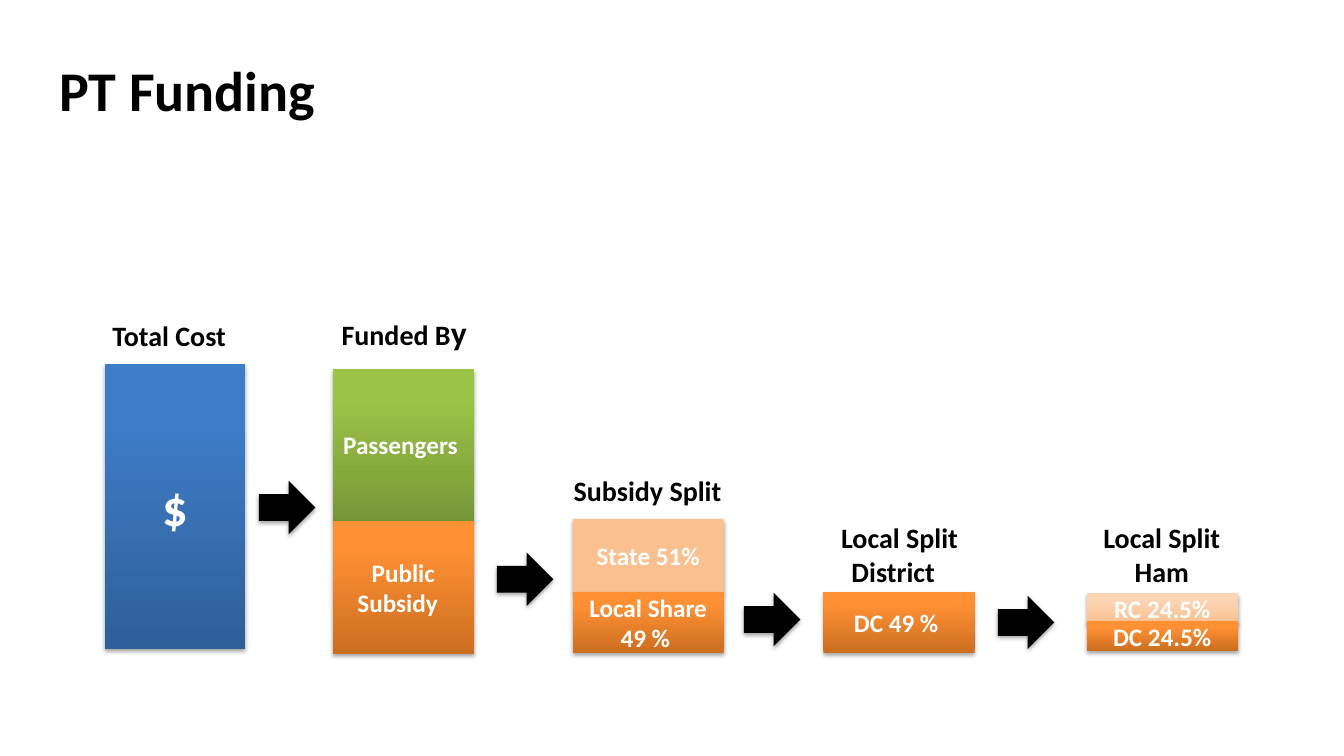
from lxml.etree import SubElement
from pptx import Presentation
from pptx.dml.color import RGBColor
from pptx.enum.shapes import MSO_SHAPE
from pptx.enum.text import MSO_ANCHOR, PP_ALIGN
from pptx.oxml.ns import qn
from pptx.util import Pt

COLOURS = {"black": "000000", "white": "FFFFFF", "peach": "FAC090"}
GRADIENTS = {
    "blue": ("2F5F99", "3D7CC7"),
    "green": ("779737", "9BC348"),
    "orange": ("CC6E20", "FF9034"),
    "pale": ("FAC090", "FCD5B5"),
}
TITLE = {"size": 40, "colour": "black"}
HEADING = {"size": 20, "colour": "black"}
HEADING_LARGE = {"size": 24, "colour": "black"}
BLOCK = {"size": 18, "colour": "white"}
DOLLAR = {"size": 36, "colour": "white"}

BLOCKS = [
    ("$", 74.9, 259.9, 100, 203.8, "blue", DOLLAR),
    ("Passengers ", 237.6, 263.5, 101, 108.4, "green", BLOCK),
    ("Public Subsidy  ", 237.6, 371.9, 101, 95, "orange", BLOCK),
    ("State 51%", 409, 370.6, 108, 52.4, "peach", BLOCK),
    ("Local Share 49 % ", 409, 423, 108, 43.5, "orange", BLOCK),
    ("DC 49 % ", 588.2, 423, 108, 43.5, "orange", BLOCK),
    ("RC 24.5%", 776.2, 423.7, 108, 21.6, "pale", BLOCK),
    ("DC 24.5%", 776.2, 443.5, 108, 21.6, "orange", BLOCK),
]
HEADINGS = [
    ([[("Total Cost ", HEADING)]], 69.1, 223.9, 108, 31.7),
    ([[("Funded B", HEADING), ("y ", HEADING_LARGE)]], 235.4, 218.9, 106.6, 36.7),
    ([[("Subsidy Split", HEADING)]], 400.3, 334.8, 124.6, 31.7),
    ([[("Local Split", HEADING)], [("District  ", HEADING)]], 564.5, 368.6, 156.2, 55.4),
    ([[("Local Split", HEADING)], [("Ham", HEADING)]], 747.4, 368.6, 164.9, 55.4),
]
ARROWS = [(185, 343.4), (355, 394.6), (531.4, 423.4), (712.8, 425.5)]
ARROW_SIZE = (40.3, 38.2)


def points(*lengths):
    return [Pt(length) for length in lengths]


def write_paragraphs(frame, paragraphs, **layout):
    frame.word_wrap = True
    for index, spans in enumerate(paragraphs):
        para = frame.add_paragraph() if index else frame.paragraphs[0]
        for name, value in layout.items():
            setattr(para, name, value)
        for text, style in spans:
            span = para.add_run()
            span.text = text
            values = {"name": "Calibri", "size": Pt(style["size"]), "bold": True}
            for name, value in values.items():
                setattr(span.font, name, value)
            span.font.color.rgb = RGBColor.from_string(COLOURS[style["colour"]])


def add_shadow(shape):
    shape.shadow.inherit = False
    effects = shape._element.spPr.find(qn("a:effectLst"))
    values = {"blurRad": Pt(3.1), "dist": Pt(1.8), "dir": 90 * 60000, "rotWithShape": 0}
    shadow = SubElement(effects, qn("a:outerShdw"))
    for name, value in values.items():
        shadow.set(name, str(int(value)))
    colour = SubElement(shadow, qn("a:srgbClr"), val=COLOURS["black"])
    SubElement(colour, qn("a:alpha"), val="35000")


def paint(shape, fill_name):
    shape.line.fill.background()
    if fill_name in COLOURS:
        shape.fill.solid()
        shape.fill.fore_color.rgb = RGBColor.from_string(COLOURS[fill_name])
    else:
        shape.fill.gradient()
        shape.fill.gradient_angle = 90
        stops = zip(shape.fill.gradient_stops, GRADIENTS[fill_name], (0, 0.8))
        for stop, colour, position in stops:
            stop.color.rgb = RGBColor.from_string(colour)
            stop.position = position
    add_shadow(shape)


def add_block(page, text, left, top, width, height, fill_name, style):
    block = page.shapes.add_shape(MSO_SHAPE.RECTANGLE, *points(left, top, width, height))
    paint(block, fill_name)
    block.text_frame.vertical_anchor = MSO_ANCHOR.MIDDLE
    write_paragraphs(block.text_frame, [[(text, style)]], alignment=PP_ALIGN.CENTER)


def add_arrow(page, left, top):
    arrow = page.shapes.add_shape(MSO_SHAPE.RIGHT_ARROW, *points(left, top, *ARROW_SIZE))
    paint(arrow, "black")


def add_heading(page, paragraphs, left, top, width, height):
    box = page.shapes.add_textbox(*points(left, top, width, height))
    write_paragraphs(box.text_frame, paragraphs, alignment=PP_ALIGN.CENTER)


def add_title(page, text):
    box = page.shapes.add_textbox(*points(35.3, 22.3, 575.3, 89.3))
    box.text_frame.vertical_anchor = MSO_ANCHOR.MIDDLE
    write_paragraphs(box.text_frame, [[(text, TITLE)]],
                     alignment=PP_ALIGN.LEFT, line_spacing=0.9)


def main():
    deck = Presentation()
    deck.slide_width, deck.slide_height = points(960, 540)
    page = deck.slides.add_slide(deck.slide_layouts[6])
    add_title(page, "PT Funding")
    for block in BLOCKS:
        add_block(page, *block)
    for arrow in ARROWS:
        add_arrow(page, *arrow)
    for heading in HEADINGS:
        add_heading(page, *heading)
    deck.save("out.pptx")


if __name__ == "__main__":
    main()
